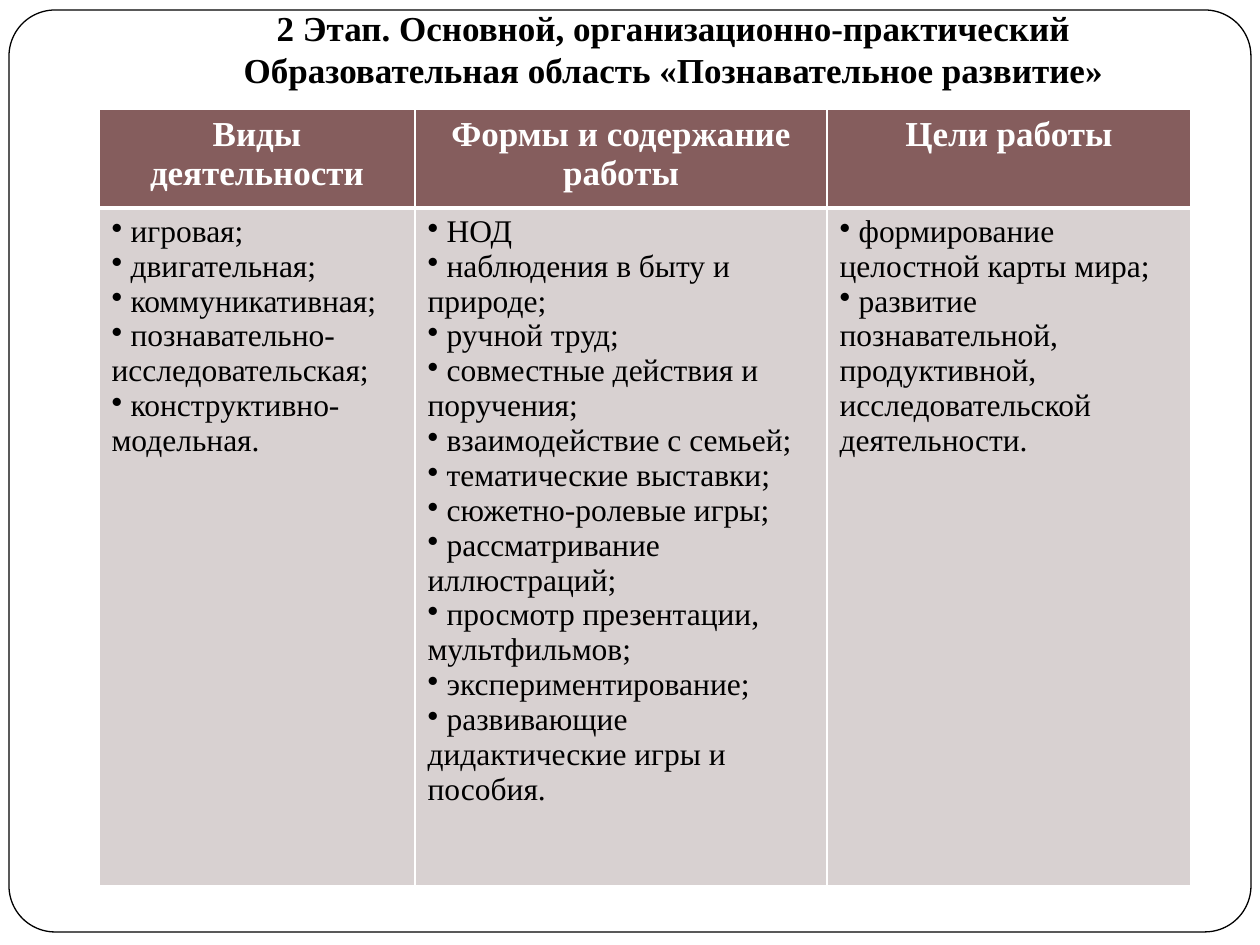
import pptx
import pptx.util
import pptx.dml.color
import pptx.enum.shapes
import pptx.enum.text
import lxml.etree

PX = 914400 / 126
FONT = "Times New Roman"
COLORS = {"text": "000000", "paper": "FFFFFF", "header": "855D5D", "body": "D8D1D1"}
NS = "http://schemas.openxmlformats.org/drawingml/2006/main"

columns = [
    (316, "Виды деятельности", [
        "игровая;",
        "двигательная;",
        "коммуникативная;",
        "познавательно-исследовательская;",
        "конструктивно-модельная.",
    ]),
    (412, "Формы и содержание работы", [
        "НОД",
        "наблюдения в быту и природе;",
        "ручной труд;",
        "совместные действия и поручения;",
        "взаимодействие с семьей;",
        "тематические выставки;",
        "сюжетно-ролевые игры;",
        "рассматривание иллюстраций;",
        "просмотр презентации, мультфильмов;",
        "экспериментирование;",
        "развивающие дидактические игры и пособия.",
    ]),
    (364, "Цели работы", [
        "формирование целостной карты мира;",
        "развитие познавательной, продуктивной, исследовательской деятельности.",
    ]),
]
row_heights = [99, 678]


def px(*values):
    """Turn pixels into EMU lengths."""
    return [pptx.util.Emu(round(v * PX)) for v in values]


def add_run(p, text, size, color, bold):
    r = p.add_run()
    r.text = text
    r.font.name = FONT
    r.font.size = pptx.util.Pt(size)
    r.font.bold = bold
    r.font.color.rgb = pptx.dml.color.RGBColor.from_string(COLORS[color])


prs = pptx.Presentation()
prs.slide_width, prs.slide_height = px(1260, 945)
s = prs.slides.add_slide(prs.slide_layouts[5])

# Title
title = s.shapes.title
title.left, title.top, title.width, title.height = px(147, 0, 1053, 97)
tf = title.text_frame
tf.word_wrap = True
tf.auto_size = pptx.enum.text.MSO_AUTO_SIZE.NONE
tf.vertical_anchor = pptx.enum.text.MSO_ANCHOR.TOP
p = tf.paragraphs[0]
p.alignment = pptx.enum.text.PP_ALIGN.CENTER
p.line_spacing = pptx.util.Pt(24)
add_run(p, "2 Этап. Основной, организационно-практический "
           "Образовательная область «Познавательное развитие»", 20, "text", True)

# Rounded frame, placed behind the title
frame = s.shapes.add_shape(pptx.enum.shapes.MSO_SHAPE.ROUNDED_RECTANGLE, *px(9, 10, 1242, 922))
frame.adjustments[0] = 0.05
frame.shadow.inherit = False
frame.fill.solid()
frame.fill.fore_color.rgb = pptx.dml.color.RGBColor.from_string(COLORS["paper"])
frame.line.color.rgb = pptx.dml.color.RGBColor.from_string(COLORS["text"])
frame.line.width = pptx.util.Pt(0.75)
title._element.addprevious(frame._element)

# Table
table_width = sum(width for width, _, _ in columns)
table = s.shapes.add_table(2, len(columns), *px(99, 109, table_width, sum(row_heights))).table
table.horz_banding = False
for row, height in zip(table.rows, row_heights):
    row.height = px(height)[0]

for c, (width, heading, items) in enumerate(columns):
    table.columns[c].width = px(width)[0]

    p = table.cell(0, c).text_frame.paragraphs[0]
    p.alignment = pptx.enum.text.PP_ALIGN.CENTER
    add_run(p, heading, 20, "paper", True)

    tf = table.cell(1, c).text_frame
    for i, item in enumerate(items):
        p = tf.paragraphs[0] if i == 0 else tf.add_paragraph()
        pPr = p._p.get_or_add_pPr()
        pPr.set("marL", "0")
        pPr.set("indent", str(px(-15)[0]))
        bullet_color = lxml.etree.SubElement(pPr, f"{{{NS}}}buClr")
        lxml.etree.SubElement(bullet_color, f"{{{NS}}}srgbClr", val=COLORS["text"])
        lxml.etree.SubElement(pPr, f"{{{NS}}}buChar", char="•")
        add_run(p, " " + item, 18, "text", False)

    for r, fill in enumerate(["header", "body"]):
        cell = table.cell(r, c)
        tcPr = cell._tc.get_or_add_tcPr()
        for side in "LRTB":
            thick = (r, side) in [(0, "B"), (1, "T")]
            line = lxml.etree.SubElement(tcPr, f"{{{NS}}}ln{side}",
                                         w=str(pptx.util.Pt(3 if thick else 1)))
            line_fill = lxml.etree.SubElement(line, f"{{{NS}}}solidFill")
            lxml.etree.SubElement(line_fill, f"{{{NS}}}srgbClr", val=COLORS["paper"])
        cell.fill.solid()
        cell.fill.fore_color.rgb = pptx.dml.color.RGBColor.from_string(COLORS[fill])

prs.save("out.pptx")
